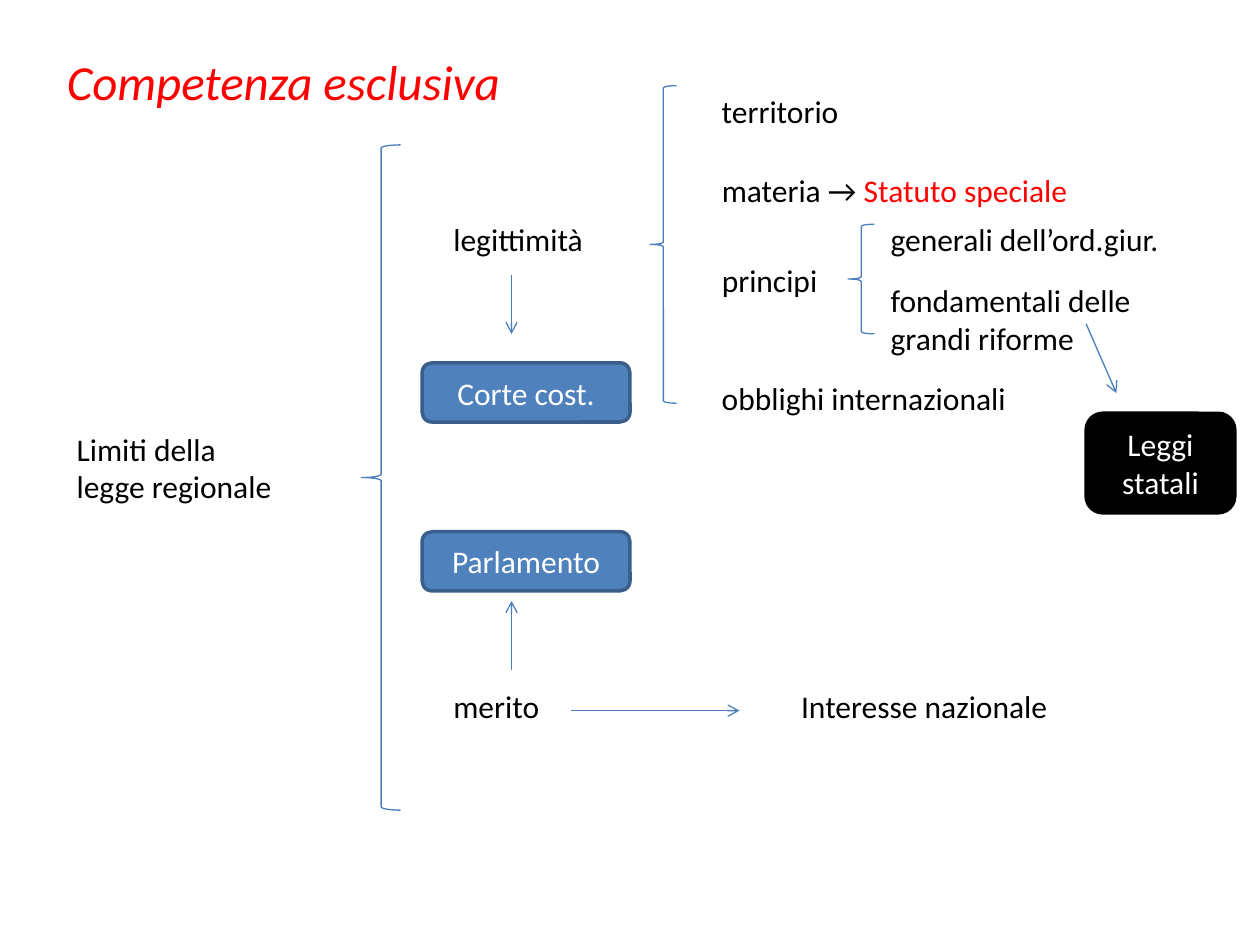
from lxml import etree
from pptx import Presentation
from pptx.dml.color import RGBColor
from pptx.enum.shapes import MSO_CONNECTOR, MSO_SHAPE
from pptx.enum.text import MSO_ANCHOR, MSO_AUTO_SIZE, PP_ALIGN
from pptx.oxml.ns import qn
from pptx.util import Inches, Pt

STRAIGHT = MSO_CONNECTOR.STRAIGHT
LEFT_BRACE, ROUNDED = MSO_SHAPE.LEFT_BRACE, MSO_SHAPE.ROUNDED_RECTANGLE
TOP, MIDDLE = MSO_ANCHOR.TOP, MSO_ANCHOR.MIDDLE
LEFT, CENTER = PP_ALIGN.LEFT, PP_ALIGN.CENTER
GROW = MSO_AUTO_SIZE.SHAPE_TO_FIT_TEXT

FONT = "Calibri"
COLORS = {"black": "000000", "white": "FFFFFF", "red": "FF0000",
          "line": "4B7EBC", "blue": "4F81BD", "border": "3A5F8C"}

# Shared columns and row heights, in inches
BRANCH_X, BODY_X, LIMIT_X, PRINCIPLE_X = 3.5, 3.35, 5.63, 6.97
ARROW_X = 4.06
ONE_LINE, TWO_LINES = 0.4, 0.71


def color(name):
    return RGBColor.from_string(COLORS[name])


def write(shape, *parts, size=18, ink="black", italic=False, align=LEFT,
          anchor=TOP):
    """Fill a shape with one paragraph; a part is text or (text, ink)."""
    frame = shape.text_frame
    frame.word_wrap = True
    frame.vertical_anchor = anchor
    para = frame.paragraphs[0]
    para.alignment = align
    for part in parts:
        text, part_ink = (part, ink) if isinstance(part, str) else part
        span = para.add_run()
        span.text = text
        span.font.name = FONT
        span.font.size = Pt(size)
        span.font.italic = italic
        span.font.color.rgb = color(part_ink)


def add_title(page, text, left, top, width, height):
    title = page.shapes.title
    title.left, title.top = Inches(left), Inches(top)
    title.width, title.height = Inches(width), Inches(height)
    write(title, text, size=28, ink="red", italic=True)


def add_label(page, left, top, width, *parts, height=ONE_LINE):
    box = page.shapes.add_textbox(*map(Inches, (left, top, width, height)))
    write(box, *parts)
    box.text_frame.auto_size = GROW


def add_brace(page, *bounds):
    brace = page.shapes.add_shape(LEFT_BRACE, *map(Inches, bounds))
    brace.shadow.inherit = False
    brace.fill.background()
    brace.line.color.rgb = color("line")
    brace.line.width = Pt(0.75)


def add_body(page, text, *bounds, fill="blue", border="border"):
    body = page.shapes.add_shape(ROUNDED, *map(Inches, bounds))
    body.shadow.inherit = False
    body.fill.solid()
    body.fill.fore_color.rgb = color(fill)
    body.line.color.rgb = color(border)
    body.line.width = Pt(2)
    write(body, text, ink="white", align=CENTER, anchor=MIDDLE)


def add_arrow(page, *ends):
    arrow = page.shapes.add_connector(STRAIGHT, *map(Inches, ends))
    arrow.line.color.rgb = color("line")
    arrow.line.width = Pt(0.75)
    etree.SubElement(arrow.line._get_or_add_ln(), qn("a:tailEnd"), type="arrow")
    etree.SubElement(arrow._element.spPr, qn("a:effectLst"))


def main():
    deck = Presentation()
    deck.slide_width, deck.slide_height = Inches(10), Inches(7.5)
    page = deck.slides.add_slide(deck.slide_layouts[5])
    add_title(page, "Competenza esclusiva", 0.43, 0.36, 4.57, 0.57)

    # Root and its two branches
    add_label(page, 0.51, 3.36, 1.89, "Limiti della legge regionale",
              height=TWO_LINES)
    add_brace(page, 2.87, 1.15, 0.31, 5.28)
    add_label(page, BRANCH_X, 1.7, 1.65, "legittimità")
    add_label(page, BRANCH_X, 5.4, 1.26, "merito")

    # Bodies that review each branch
    for text, top in (("Corte cost.", 2.88), ("Parlamento", 4.22)):
        add_body(page, text, BODY_X, top, 1.65, 0.47)
    add_arrow(page, ARROW_X, 2.18, ARROW_X, 2.65)
    add_arrow(page, ARROW_X, 5.32, ARROW_X, 4.77)

    # Merit leads to the national interest
    add_arrow(page, 4.53, 5.64, 5.87, 5.64)
    add_label(page, 6.26, 5.4, 2.6, "Interesse nazionale")

    # Limits of legitimacy
    add_brace(page, 5.16, 0.68, 0.21, 2.52)
    add_label(page, LIMIT_X, 0.68, 1.73, "territorio")
    add_label(page, LIMIT_X, 1.31, 2.99, "materia → ",
              ("Statuto speciale", "red"))
    add_label(page, LIMIT_X, 2.02, 1.02, "principi")
    add_label(page, LIMIT_X, 2.96, 2.76, "obblighi internazionali")

    # Principles and the state laws they come from
    add_brace(page, 6.73, 1.78, 0.21, 0.87)
    add_label(page, PRINCIPLE_X, 1.7, 2.44, "generali dell’ord.giur.")
    add_label(page, PRINCIPLE_X, 2.18, 2.28,
              "fondamentali delle grandi riforme", height=TWO_LINES)
    add_arrow(page, 8.62, 2.57, 8.86, 3.12)
    add_body(page, "Leggi statali", 8.62, 3.28, 1.18, 0.79,
             fill="black", border="black")

    deck.save("out.pptx")


if __name__ == "__main__":
    main()
